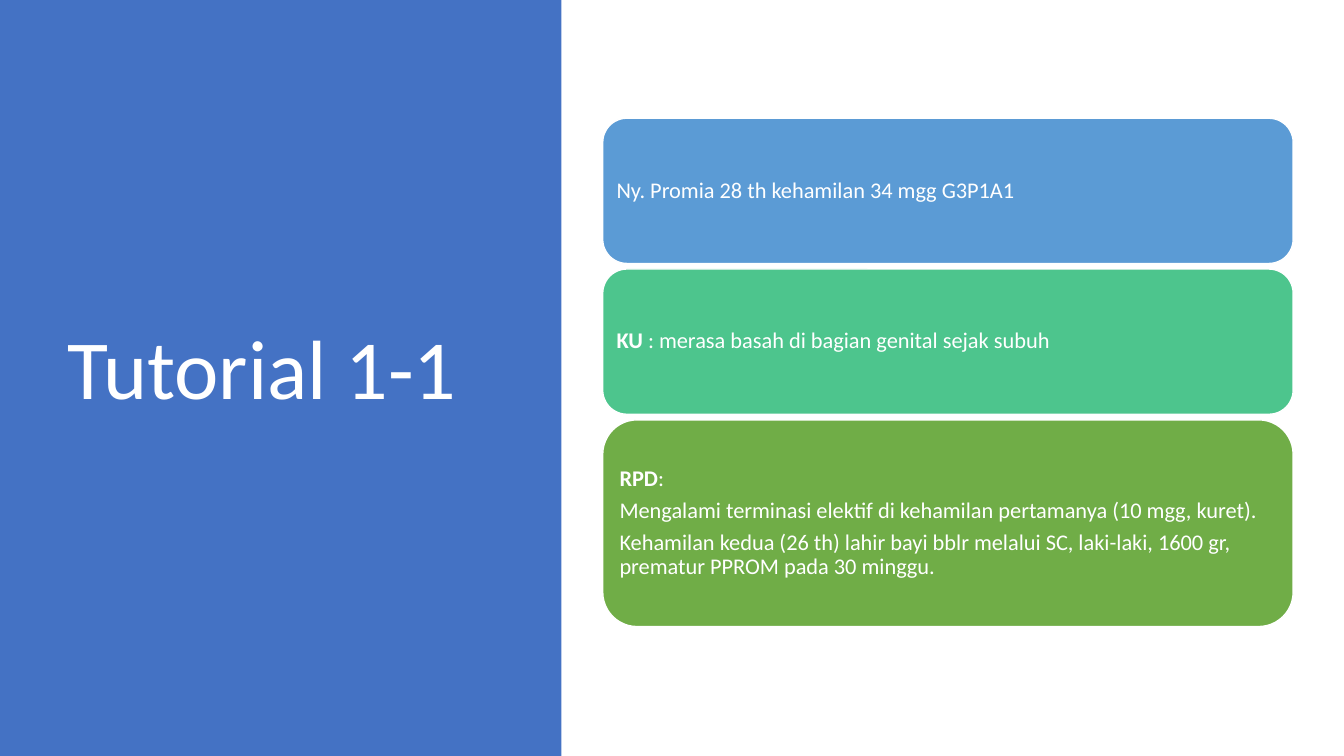
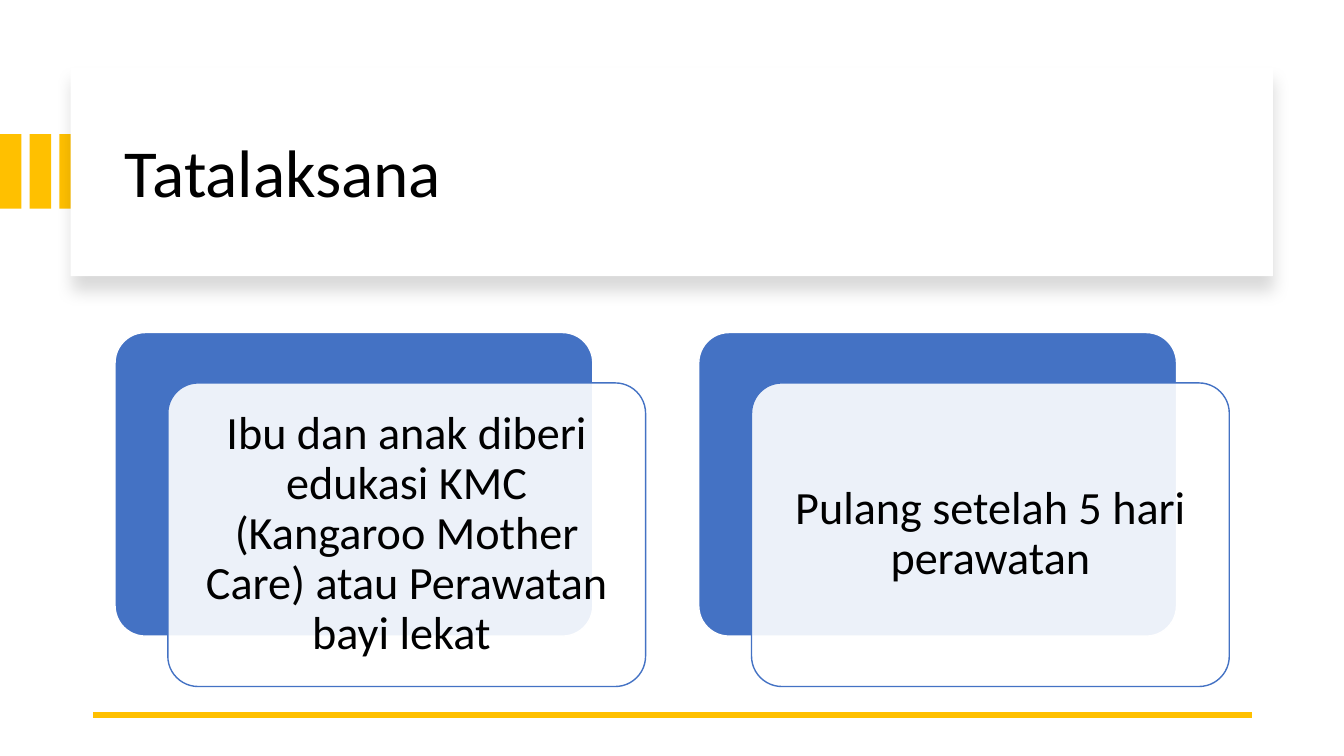
from dataclasses import dataclass

from lxml.etree import SubElement
from pptx import Presentation
from pptx.dml.color import RGBColor as RGB
from pptx.enum.shapes import MSO_CONNECTOR as Conn, MSO_SHAPE as Shape
from pptx.enum.text import MSO_ANCHOR as Anchor, PP_ALIGN as Align
from pptx.oxml.ns import qn
from pptx.util import Cm, Pt


@dataclass(frozen=True)
class Theme:
    font: str = "Calibri"
    white: str = "FFFFFF"
    black: str = "000000"
    blue: str = "4472C4"
    sky: str = "5B9BD5"
    mint: str = "4DC58D"
    green: str = "70AD47"
    gold: str = "FFC000"
    cover_size: int = 60
    title_size: int = 48
    fact_size: int = 16
    step_size: int = 33
    line_spacing: float = 0.9
    space_after: float = 0.35


class Deck:
    def __init__(self, theme):
        self.t = theme
        self.prs = Presentation()
        self.prs.slide_width, self.prs.slide_height = Cm(33.87), Cm(19.05)
        self.s = None

    def slide(self):
        self.s = self.prs.slides.add_slide(self.prs.slide_layouts[6])

    def box(self, x, y, w, h, fill, kind=Shape.RECTANGLE, line=None):
        sp = self.s.shapes.add_shape(kind, Cm(x), Cm(y), Cm(w), Cm(h))
        sp.shadow.inherit = False
        sp.fill.solid()
        sp.fill.fore_color.rgb = RGB.from_string(fill)
        if line:
            sp.line.color.rgb = RGB.from_string(line)
            sp.line.width = Pt(1)
        else:
            sp.line.fill.background()
        return sp

    def card(self, x, y, w, h, fill, line, radius=1 / 6, opacity=None):
        sp = self.box(x, y, w, h, fill, Shape.ROUNDED_RECTANGLE, line)
        sp.adjustments[0] = radius
        if opacity is not None:
            color = sp._element.spPr.find(qn("a:solidFill"))[0]
            SubElement(color, qn("a:alpha"), val=str(opacity * 1000))
        return sp

    def drop_shadow(self, sp, opacity, blur, dist):
        effects = sp._element.spPr.find(qn("a:effectLst"))
        shadow = SubElement(effects, qn("a:outerShdw"), blurRad=str(Pt(blur)),
                            dist=str(Pt(dist)), dir="5400000", algn="t", rotWithShape="0")
        color = SubElement(shadow, qn("a:srgbClr"), val=self.t.black)
        SubElement(color, qn("a:alpha"), val=str(opacity * 1000))

    def add_text(self, sp, paragraphs, size, color, align=Align.LEFT, inset=None, after=0):
        tf = sp.text_frame
        tf.word_wrap = True
        tf.vertical_anchor = Anchor.MIDDLE
        if inset is not None:
            tf.margin_left = tf.margin_right = tf.margin_top = tf.margin_bottom = Cm(inset)
        for i, runs in enumerate(paragraphs):
            p = tf.add_paragraph() if i else tf.paragraphs[0]
            p.alignment = align
            p.line_spacing = self.t.line_spacing
            p.space_after = Pt(round(size * after, 1))
            for text, bold in runs:
                r = p.add_run()
                r.text = text
                r.font.name = self.t.font
                r.font.size = Pt(size)
                r.font.bold = bold
                r.font.color.rgb = RGB.from_string(color)

    def title(self, text, x, y, w, h, size, color):
        sp = self.s.shapes.add_textbox(Cm(x), Cm(y), Cm(w), Cm(h))
        self.add_text(sp, [[(text, False)]], size, color)

    def rule(self, x1, x2, y, color, width):
        ln = self.s.shapes.add_connector(Conn.STRAIGHT, Cm(x1), Cm(y), Cm(x2), Cm(y))
        ln.line.color.rgb = RGB.from_string(color)
        ln.line.width = Pt(width)
        SubElement(ln._element.spPr, qn("a:effectLst"))

    def fact_stack(self, x, y, w, gap, facts):
        for h, fill, paragraphs in facts:
            sp = self.card(x, y, w, h, fill, self.t.white)
            self.add_text(sp, paragraphs, self.t.fact_size, self.t.white,
                          inset=0.17, after=self.t.space_after)
            y += h + gap

    def step_row(self, x, y, w, h, pitch, steps):
        for i, text in enumerate(steps):
            left = x + i * pitch
            self.card(left, y, w, h, self.t.blue, self.t.white, 0.1)
            sp = self.card(left + 1.33, y + 1.27, w, h, self.t.white, self.t.blue, 0.1, 90)
            self.add_text(sp, [[(text, False)]], self.t.step_size, self.t.black,
                          Align.CENTER, 0.35, self.t.space_after)


def case_slide(d):
    t = d.t
    d.slide()
    d.box(0, 0, 14.15, 19.05, t.blue)
    d.title("Tutorial 1-1", 1.45, 1.73, 10.57, 15.29, t.cover_size, t.white)
    d.fact_stack(15.19, 2.98, 17.4, 0.14, [
        (3.66, t.sky, [[("Ny. Promia 28 th kehamilan 34 mgg G3P1A1", False)]]),
        (3.66, t.mint, [[("KU", True),
                         (" : merasa basah di bagian genital sejak subuh", False)]]),
        (5.21, t.green, [
            [("RPD", True), (":", False)],
            [("Mengalami terminasi elektif di kehamilan pertamanya (10 mgg, kuret).", False)],
            [("Kehamilan kedua (26 th) lahir bayi bblr melalui SC, laki-laki, 1600 gr, "
              "prematur PPROM pada 30 minggu.", False)],
        ]),
    ])


def care_slide(d):
    t = d.t
    d.slide()
    for i in range(3):
        d.box(i * 0.75, 3.38, 0.54, 1.88, t.gold)
    panel = d.box(1.78, 1.7, 30.3, 5.26, t.white)
    d.drop_shadow(panel, 15, 11, 10)
    d.title("Tatalaksana", 2.9, 2.26, 28.27, 4.32, t.title_size, t.black)
    d.rule(31.55, 2.34, 18.01, t.gold, 4.5)
    d.step_row(2.9, 8.38, 12.04, 7.65, 14.71, [
        "Ibu dan anak diberi edukasi KMC (Kangaroo Mother Care) atau Perawatan bayi lekat ",
        "Pulang setelah 5 hari perawatan",
    ])


def main():
    d = Deck(Theme())
    case_slide(d)
    care_slide(d)
    d.prs.save("out.pptx")


if __name__ == "__main__":
    main()
